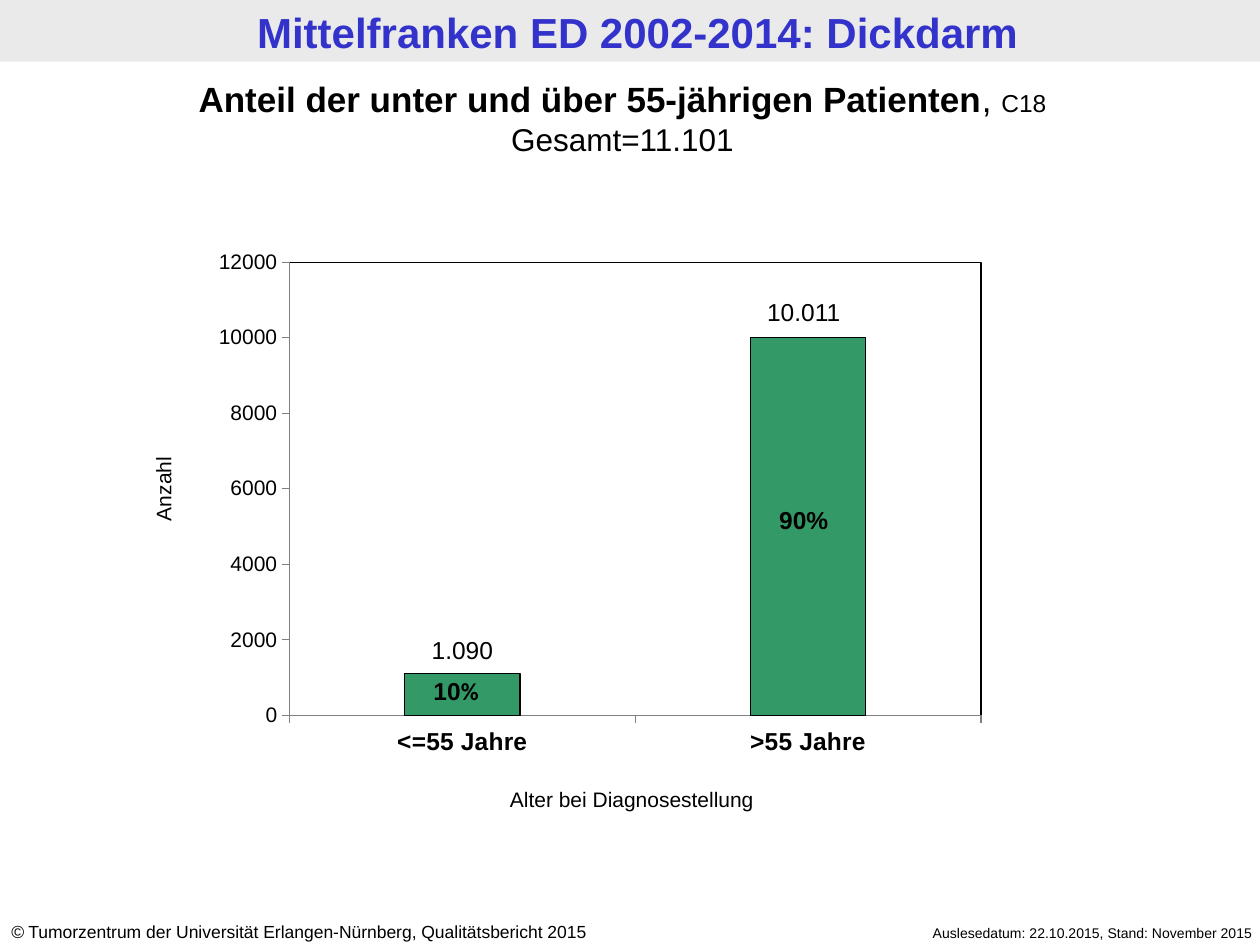
"""Build the slide on the share of colon cancer patients under and over 55."""
from lxml import etree
from pptx import Presentation
from pptx.chart.data import CategoryChartData
from pptx.dml.color import RGBColor
from pptx.enum.chart import XL_CHART_TYPE, XL_TICK_MARK
from pptx.enum.shapes import MSO_SHAPE
from pptx.enum.text import MSO_ANCHOR, MSO_AUTO_SIZE, PP_ALIGN
from pptx.oxml import parse_xml
from pptx.oxml.ns import qn
from pptx.util import Pt

STACKED = XL_CHART_TYPE.COLUMN_STACKED
OUTSIDE = XL_TICK_MARK.OUTSIDE
RECTANGLE = MSO_SHAPE.RECTANGLE
TOP, MIDDLE = MSO_ANCHOR.TOP, MSO_ANCHOR.MIDDLE
NO_FIT = MSO_AUTO_SIZE.NONE
LEFT, CENTER, RIGHT = PP_ALIGN.LEFT, PP_ALIGN.CENTER, PP_ALIGN.RIGHT

COLORS = {"band": "EAEAEA", "title": "3333CC", "text": "000000",
          "bar": "339966", "axis": "808080"}
FONT = "Arial"
WIDTH, HEIGHT = 720, 540
BAND_HEIGHT = 35.3

TITLE = [[("Mittelfranken ED 2002-2014: Dickdarm", {"bold": True})]]
SUBTITLE = [
    [("Anteil der unter und über 55-jährigen Patienten", {"size": 20, "bold": True}),
     (", ", {"size": 20}), ("C18", {"size": 14})],
    [("Gesamt=11.101", {"size": 18})],
]
COPYRIGHT = [[("©", {"italic": True}),
              (" Tumorzentrum der Universität Erlangen-Nürnberg, Qualitätsbericht 2015", {})]]
STATUS = [[("Auslesedatum: 22.10.2015, Stand: November 2015", {})]]
PERCENT_SMALL = [[("10", {"bold": True}), ("%", {"bold": True, "font": "Calibri"})]]
PERCENT_LARGE = [[("90%", {"bold": True})]]

CATEGORIES = ["<=55 Jahre", ">55 Jahre"]
VALUES = [1100, 10000]
CHART_FRAME = (108.7, 102.2, 502.6, 335.5)
PLOT = {"x": 0.113, "y": 0.142, "w": 0.786, "h": 0.772}

TEXTS = [
    (SUBTITLE, (0, 41, 711.4, 53.3), {}),
    (COPYRIGHT, (-0.7, 522.7, 377.3, 19.4), {"size": 10, "align": LEFT}),
    (STATUS, (478.8, 524.9, 244.1, 17.3), {"size": 8, "align": RIGHT}),
    (PERCENT_SMALL, (223.9, 383, 73.4, 24.5), {}),
    (PERCENT_LARGE, (422.6, 285.1, 73.4, 24.5), {}),
    ([[("1.090", {})]], (227.5, 359.3, 73.4, 24.5), {}),
    ([[("10.011", {})]], (422.6, 166.3, 73.4, 24.5), {}),
    ([[("Alter bei Diagnosestellung", {})]], (241.2, 445.7, 239.8, 21.6), {"size": 12}),
    ([[("Anzahl", {})]], (-0.7, 268.6, 187.9, 21.6), {"size": 12, "rotation": 270}),
]


def rgb(name):
    """Return the named colour."""
    return RGBColor.from_string(COLORS[name])


def set_font(font, size, bold=False, italic=False, name=FONT, color="text"):
    """Format a font."""
    font.name, font.size = name, Pt(size)
    font.bold, font.italic = bold, italic
    font.color.rgb = rgb(color)


def write(box, paragraphs, size=14, align=CENTER, color="text", anchor=TOP, rotation=0):
    """Fill a box with paragraphs of formatted spans."""
    box.rotation = rotation
    frame = box.text_frame
    frame.word_wrap = True
    frame.auto_size = NO_FIT
    frame.vertical_anchor = anchor
    for index, spans in enumerate(paragraphs):
        para = frame.add_paragraph() if index else frame.paragraphs[0]
        para.alignment = align
        for text, style in spans:
            span = para.add_run()
            span.text = text
            set_font(span.font, style.get("size", size), style.get("bold", False),
                     style.get("italic", False), style.get("font", FONT), color)


def add_title(slide):
    """Place the title on its band."""
    band = slide.shapes.add_shape(RECTANGLE, 0, 0, Pt(WIDTH), Pt(BAND_HEIGHT))
    band.shadow.inherit = False
    band.fill.solid()
    band.fill.fore_color.rgb = rgb("band")
    band.line.fill.background()
    title = slide.shapes.title
    title._element.addprevious(band._element)
    title.left, title.top = Pt(4.3), Pt(0.7)
    title.width, title.height = Pt(WIDTH), Pt(BAND_HEIGHT)
    write(title, TITLE, size=24, color="title", anchor=MIDDLE)


def frame_plot(chart):
    """Fix the inner plot area and outline it."""
    plot_area = chart._chartSpace.chart.plotArea
    for old in plot_area.findall(qn("c:layout")):
        plot_area.remove(old)
    layout = etree.Element(qn("c:layout"))
    manual = etree.SubElement(layout, qn("c:manualLayout"))
    settings = {"layoutTarget": "inner", "xMode": "edge", "yMode": "edge", **PLOT}
    for tag, value in settings.items():
        etree.SubElement(manual, qn(f"c:{tag}")).set("val", str(value))
    plot_area.insert(0, layout)
    plot_area.append(parse_xml(
        '<c:spPr xmlns:c="http://schemas.openxmlformats.org/drawingml/2006/chart"'
        ' xmlns:a="http://schemas.openxmlformats.org/drawingml/2006/main"><a:noFill/>'
        f'<a:ln w="9525"><a:solidFill><a:srgbClr val="{COLORS["text"]}"/></a:solidFill></a:ln>'
        '</c:spPr>'))


def add_age_chart(slide):
    """Add the column chart of patients by age group."""
    data = CategoryChartData()
    data.categories = CATEGORIES
    data.add_series("Series 1", VALUES)
    chart = slide.shapes.add_chart(STACKED, *map(Pt, CHART_FRAME), data).chart
    chart.has_legend = chart.has_title = False
    set_font(chart.font, 18, name="Calibri")
    for axis, size, bold in ((chart.category_axis, 14, True), (chart.value_axis, 12, False)):
        axis.has_major_gridlines = False
        axis.major_tick_mark = OUTSIDE
        axis.format.line.color.rgb = rgb("axis")
        axis.format.line.width = Pt(0.75)
        set_font(axis.tick_labels.font, size, bold)
    scale = chart.value_axis
    scale.minimum_scale, scale.maximum_scale, scale.major_unit = 0, 12000, 2000
    plot = chart.plots[0]
    plot.gap_width, plot.overlap, plot.vary_by_categories = 200, 100, False
    bars = plot.series[0].format
    bars.fill.solid()
    bars.fill.fore_color.rgb = rgb("bar")
    bars.line.color.rgb = rgb("text")
    bars.line.width = Pt(0.75)
    frame_plot(chart)


def main():
    """Build and save the deck."""
    deck = Presentation()
    deck.slide_width, deck.slide_height = Pt(WIDTH), Pt(HEIGHT)
    slide = deck.slides.add_slide(deck.slide_layouts[5])
    add_title(slide)
    add_age_chart(slide)
    for paragraphs, frame, style in TEXTS:
        write(slide.shapes.add_textbox(*map(Pt, frame)), paragraphs, **style)
    deck.save("out.pptx")


if __name__ == "__main__":
    main()
